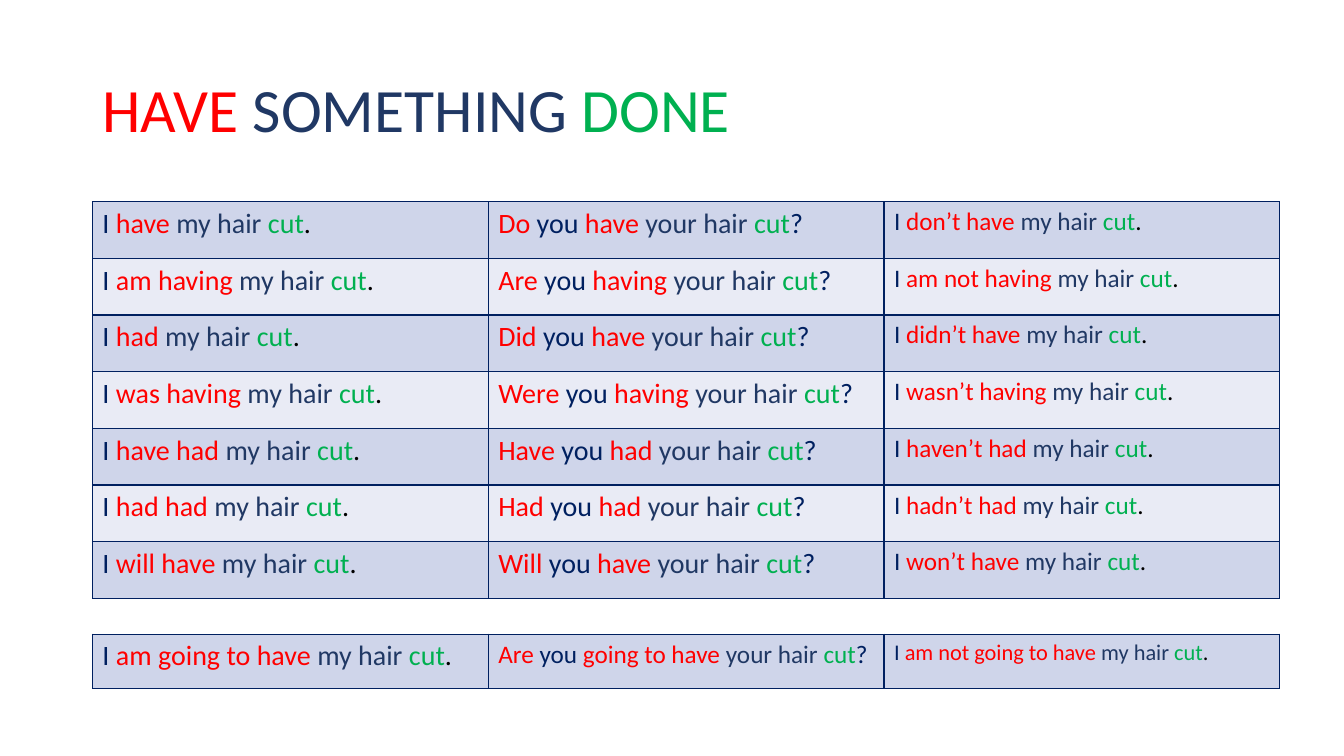
from lxml.etree import SubElement
from pptx import Presentation
from pptx.dml.color import RGBColor
from pptx.enum.text import MSO_ANCHOR, PP_ALIGN
from pptx.oxml.ns import qn
from pptx.util import Pt

PX = 9525
COLORS = {
    "verb": "FF0000",
    "subject": "002060",
    "object": "203864",
    "participle": "00B050",
    "stop": "000000",
    "border": "002060",
    "odd": "CFD5EA",
    "even": "E9EBF5",
}
LEFT, COL_W = 88, 377

TENSES = [
    ("have", "Do", "have", "don’t have"),
    ("am having", "Are", "having", "am not having"),
    ("had", "Did", "have", "didn’t have"),
    ("was having", "Were", "having", "wasn’t having"),
    ("have had", "Have", "had", "haven’t had"),
    ("had had", "Had", "had", "hadn’t had"),
    ("will have", "Will", "have", "won’t have"),
]
GOING_TO = [("am going to have", "Are", "going to have", "am not going to have")]


def statement(verb):
    return [("I ", "subject"), (verb + " ", "verb"), ("my hair ", "object"),
            ("cut", "participle"), (".", "stop")]


def question(auxiliary, verb):
    return [(auxiliary, "verb"), (" you ", "subject"), (verb + " ", "verb"),
            ("your hair ", "object"), ("cut", "participle"), ("?", "subject")]


class GrammarSlide:
    """Builds a title-only slide with colour-coded grammar tables."""

    def __init__(self, prs, font="Calibri"):
        self.font = font
        self.s = prs.slides.add_slide(prs.slide_layouts[5])

    def add_runs(self, p, runs, size):
        p.font.name = self.font
        p.font.size = Pt(size)
        for text, role in runs:
            r = p.add_run()
            r.text = text
            r.font.color.rgb = RGBColor.from_string(COLORS[role])

    def title(self, x, y, w, h, runs, size):
        sp = self.s.shapes.title
        sp.left, sp.top, sp.width, sp.height = (v * PX for v in (x, y, w, h))
        tf = sp.text_frame
        tf.vertical_anchor = MSO_ANCHOR.MIDDLE
        p = tf.paragraphs[0]
        p.alignment = PP_ALIGN.LEFT
        p.line_spacing = 0.9
        self.add_runs(p, runs, size)

    def border(self, cell):
        tc_pr = cell._tc.get_or_add_tcPr()
        for side in ("a:lnL", "a:lnR", "a:lnT", "a:lnB"):
            ln = SubElement(tc_pr, qn(side), w=str(Pt(1)))
            fill = SubElement(ln, qn("a:solidFill"))
            SubElement(fill, qn("a:srgbClr"), val=COLORS["border"])

    def table(self, y, row_h, tenses, sizes):
        frame = self.s.shapes.add_table(
            len(tenses), len(sizes), LEFT * PX, y * PX,
            len(sizes) * COL_W * PX, len(tenses) * row_h * PX)
        table = frame.table
        table.first_row = table.horz_banding = False
        for column in table.columns:
            column.width = COL_W * PX
        for i, (positive, auxiliary, verb, negative) in enumerate(tenses):
            table.rows[i].height = row_h * PX
            forms = (statement(positive), question(auxiliary, verb), statement(negative))
            for j, (runs, size) in enumerate(zip(forms, sizes)):
                cell = table.cell(i, j)
                self.border(cell)
                cell.fill.solid()
                band = "even" if i % 2 else "odd"
                cell.fill.fore_color.rgb = RGBColor.from_string(COLORS[band])
                self.add_runs(cell.text_frame.paragraphs[0], runs, size)


def main():
    prs = Presentation()
    prs.slide_width, prs.slide_height = 1280 * PX, 720 * PX
    slide = GrammarSlide(prs)
    heading = [("HAVE", "verb"), (" SOMETHING ", "object"), ("DONE", "participle")]
    slide.title(LEFT, 38, 1104, 139, heading, 44)
    slide.table(192, 54, TENSES, (20, 20, 18))
    slide.table(604, 52, GOING_TO, (20, 18, 16))
    prs.save("out.pptx")


if __name__ == "__main__":
    main()
